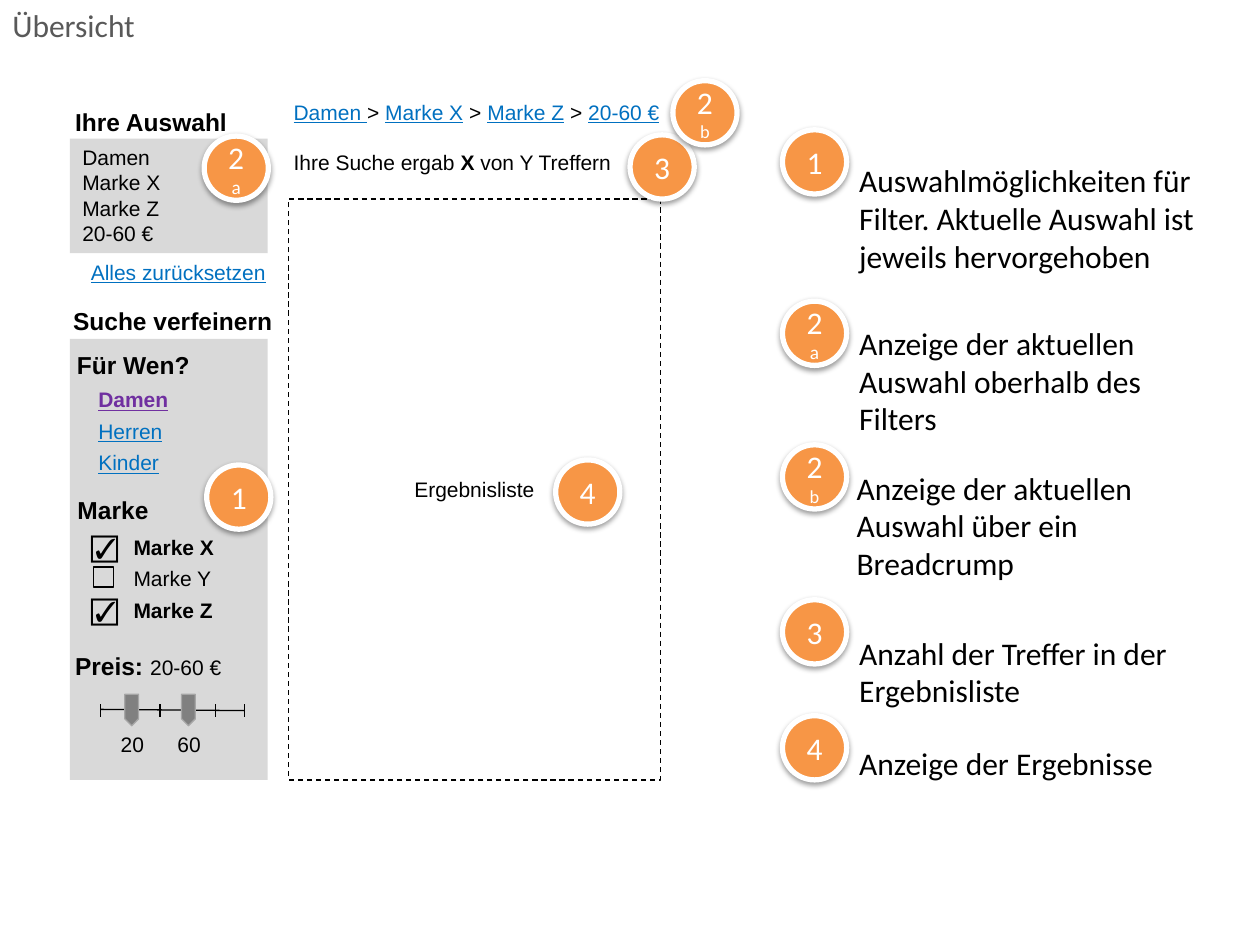
from dataclasses import dataclass, replace

from lxml.etree import SubElement
from pptx import Presentation
from pptx.dml.color import RGBColor
from pptx.enum.dml import MSO_LINE
from pptx.enum.shapes import MSO_CONNECTOR, MSO_SHAPE
from pptx.enum.text import MSO_ANCHOR, MSO_AUTO_SIZE, PP_ALIGN
from pptx.oxml.ns import qn
from pptx.util import Inches, Pt

# The slide is a grid of 100 columns by 75 rows
COLUMNS, ROWS = 100, 75
CELL = Inches(0.1)


@dataclass(frozen=True)
class Style:
    size: float
    color: str = "000000"
    font: str = "Arial"
    bold: bool = False
    underline: bool = False
    spacing: int = 0


@dataclass(frozen=True)
class Theme:
    panel: str = "D9D9D9"
    ink: str = "000000"
    white: str = "FFFFFF"
    badge: str = "F79646"
    handle: str = "808080"
    handle_edge: str = "A6A6A6"
    hairline: float = 0.75
    ring: float = 3
    title: Style = Style(18, "595959", "Calibri")
    note: Style = Style(18, font="Calibri")
    number: Style = Style(18, "FFFFFF", "Calibri")
    heading: Style = Style(14, bold=True)
    body: Style = Style(12)
    strong: Style = Style(12, bold=True)
    link: Style = Style(12, "0070C0", underline=True)
    visited: Style = Style(12, "7030A0", bold=True, underline=True)
    check: Style = Style(16)


THEME = Theme()


def cells(*counts):
    return [round(count * CELL) for count in counts]


def write(frame, paragraphs, align=PP_ALIGN.LEFT):
    """Each paragraph is a list of (text, style) runs."""
    for index, runs in enumerate(paragraphs):
        para = frame.add_paragraph() if index else frame.paragraphs[0]
        para.alignment = align
        for text, style in runs:
            span = para.add_run()
            span.text = text
            font = span.font
            font.name, font.size = style.font, Pt(style.size)
            font.bold, font.underline = style.bold, style.underline
            font.color.rgb = RGBColor.from_string(style.color)
            if style.spacing:
                font._element.set("spc", str(style.spacing))


def add_text(page, area, runs, wrap=False, inset=None, align=PP_ALIGN.LEFT):
    box = page.shapes.add_textbox(*cells(*area))
    frame = box.text_frame
    frame.word_wrap = wrap
    frame.auto_size = MSO_AUTO_SIZE.SHAPE_TO_FIT_TEXT
    if inset is not None:
        frame.margin_left = frame.margin_right = Inches(inset)
        frame.margin_top = frame.margin_bottom = Inches(inset)
    write(frame, [runs], align)


def add_label(page, area, *runs, align=PP_ALIGN.LEFT):
    add_text(page, area, runs, inset=0.04, align=align)


def add_preset(page, kind, area, fill=None, line=None, width=THEME.hairline):
    shape = page.shapes.add_shape(kind, *cells(*area))
    shape.shadow.inherit = False
    for paint, color in ((shape.fill, fill), (shape.line.fill, line)):
        if color:
            paint.solid()
            paint.fore_color.rgb = RGBColor.from_string(color)
        else:
            paint.background()
    if line:
        shape.line.width = Pt(width)
    return shape


def add_stroke(page, *ends):
    stroke = page.shapes.add_connector(MSO_CONNECTOR.STRAIGHT, *cells(*ends))
    stroke.line.color.rgb = RGBColor.from_string(THEME.ink)
    stroke.line.width = Pt(THEME.hairline)
    SubElement(stroke._element.spPr, qn("a:effectLst"))


def add_badge(page, left, top, name):
    badge = add_preset(page, MSO_SHAPE.OVAL, (left, top, 5.1, 5.1),
                       THEME.badge, THEME.white, THEME.ring)
    effects = badge._element.spPr.find(qn("a:effectLst"))
    shadow = SubElement(effects, qn("a:outerShdw"), blurRad=str(Pt(3.1)),
                        dist=str(Pt(1.6)), dir="5400000", rotWithShape="0")
    color = SubElement(shadow, qn("a:srgbClr"), val=THEME.ink)
    SubElement(color, qn("a:alpha"), val="38000")
    badge.text_frame.vertical_anchor = MSO_ANCHOR.MIDDLE
    runs = [(name[0], THEME.number)]
    if name[1:]:
        size = 11 if name[1:] == "a" else 10.5
        runs.append((name[1:], replace(THEME.number, size=size, spacing=-3)))
    write(badge.text_frame, [runs], PP_ALIGN.CENTER)


def add_selection(page):
    add_label(page, (5.55, 8.1, 12.9, 3.2), ("Ihre Auswahl", THEME.heading))
    panel = add_preset(page, MSO_SHAPE.RECTANGLE, (5.55, 11, 15.7, 9.1), THEME.panel)
    panel.text_frame.vertical_anchor = MSO_ANCHOR.TOP
    choices = ("Damen", "Marke X", "Marke Z", "20-60 €")
    write(panel.text_frame, [[(choice, THEME.body)] for choice in choices])
    add_label(page, (6.7, 20.2, 14.8, 2.8), ("Alles zurücksetzen", THEME.link),
              align=PP_ALIGN.RIGHT)


def add_filters(page):
    add_label(page, (5.4, 23.9, 16.7, 3.2), ("Suche verfeinern", THEME.heading))
    add_preset(page, MSO_SHAPE.RECTANGLE, (5.55, 26.9, 15.7, 35), THEME.panel)

    # Audience links
    add_label(page, (5.7, 27.4, 9.8, 3.2), ("Für Wen?", THEME.heading))
    audience = (("Damen", THEME.visited, 6.5), ("Herren", THEME.link, 6),
                ("Kinder", THEME.link, 5.8))
    for index, (name, style, width) in enumerate(audience):
        add_label(page, (7.4, 30.3 + 2.5 * index, width, 2.8), (name, style))

    # Brand check boxes
    add_label(page, (5.75, 38.9, 6.6, 3.2), ("Marke", THEME.heading))
    brands = (("Marke X", True), ("Marke Y", False), ("Marke Z", True))
    for index, (name, checked) in enumerate(brands):
        row = 42 + 2.5 * index
        style = THEME.strong if checked else THEME.body
        add_label(page, (10.2, row, 7.4, 2.8), (name, style))
        if checked:
            add_label(page, (6.8, row - 0.35, 2.8, 3.5), ("☑", THEME.check))
        else:
            add_preset(page, MSO_SHAPE.RECTANGLE, (7.4, row + 0.5, 1.6, 1.6),
                       line=THEME.ink)


def add_price_slider(page):
    add_label(page, (5.55, 51.3, 12.5, 3.2), ("Preis: ", THEME.heading),
              ("20-60 €", THEME.body))
    add_stroke(page, 8, 56.3, 19.4, 56.4)
    for column in (8, 12.7, 17.1, 19.4):
        add_stroke(page, column, 55.9, column, 56.9)
    for index, value in enumerate(("20", "60")):
        shift = 4.5 * index
        handle = add_preset(page, MSO_SHAPE.PENTAGON, (9.2 + shift, 55.8, 2.5, 1.1),
                            THEME.handle, THEME.handle_edge)
        handle.rotation = 90
        add_text(page, (8.6 + shift, 57.6, 3.9, 3), [(value, THEME.body)])


def add_results(page):
    # Breadcrumb and hit count
    crumbs = [("Damen ", THEME.link), ("> ", THEME.body), ("Marke X", THEME.link),
              (" > ", THEME.body), ("Marke Z", THEME.link), (" > ", THEME.body),
              ("20-60 €", THEME.link)]
    add_label(page, (22.9, 7.5, 30.1, 2.8), *crumbs)
    add_label(page, (22.9, 11.5, 26.2, 2.8), ("Ihre Suche ergab ", THEME.body),
              ("X", THEME.strong), (" von Y Treffern", THEME.body))
    # Result list
    area = add_preset(page, MSO_SHAPE.RECTANGLE, (22.9, 15.8, 29.5, 46.1), line=THEME.ink)
    area.line.dash_style = MSO_LINE.DASH
    area.text_frame.vertical_anchor = MSO_ANCHOR.MIDDLE
    write(area.text_frame, [[("Ergebnisliste", THEME.body)]], PP_ALIGN.CENTER)


def add_legend(page):
    # Badge name, badge row, note column, note row, note height, note
    entries = (
        ("1", 10.3, 67.2, 12.3, 10.1, "Auswahlmöglichkeiten für Filter. "
         "Aktuelle Auswahl ist jeweils hervorgehoben"),
        ("2a", 23.9, 67.2, 25.2, 10.1, "Anzeige der aktuellen Auswahl oberhalb des Filters"),
        ("2b", 35.3, 67, 36.7, 10.1, "Anzeige der aktuellen Auswahl über ein Breadcrump"),
        ("3", 47.6, 67.2, 49.8, 7.1, "Anzahl der Treffer in der Ergebnisliste"),
        ("4", 56.8, 67.2, 58.6, 4, "Anzeige der Ergebnisse"),
    )
    for name, badge_row, column, row, height, note in entries:
        add_text(page, (column, row, 29.5, height), [(note, THEME.note)], wrap=True)
        add_badge(page, 62.1, badge_row, name)


def main():
    deck = Presentation()
    deck.slide_width, deck.slide_height = COLUMNS * CELL, ROWS * CELL
    page = deck.slides.add_slide(deck.slide_layouts[6])
    add_text(page, (0, 0, COLUMNS, 6.8), [("Übersicht", THEME.title)], wrap=True)
    add_selection(page)
    add_filters(page)
    add_price_slider(page)
    add_results(page)
    # Badges on the mock-up
    for left, top, name in ((16.2, 10.8, "2a"), (50, 10.7, "3"), (16.4, 36.9, "1"),
                            (53.4, 6.4, "2b"), (44.1, 36.5, "4")):
        add_badge(page, left, top, name)
    add_legend(page)
    deck.save("out.pptx")


if __name__ == "__main__":
    main()
